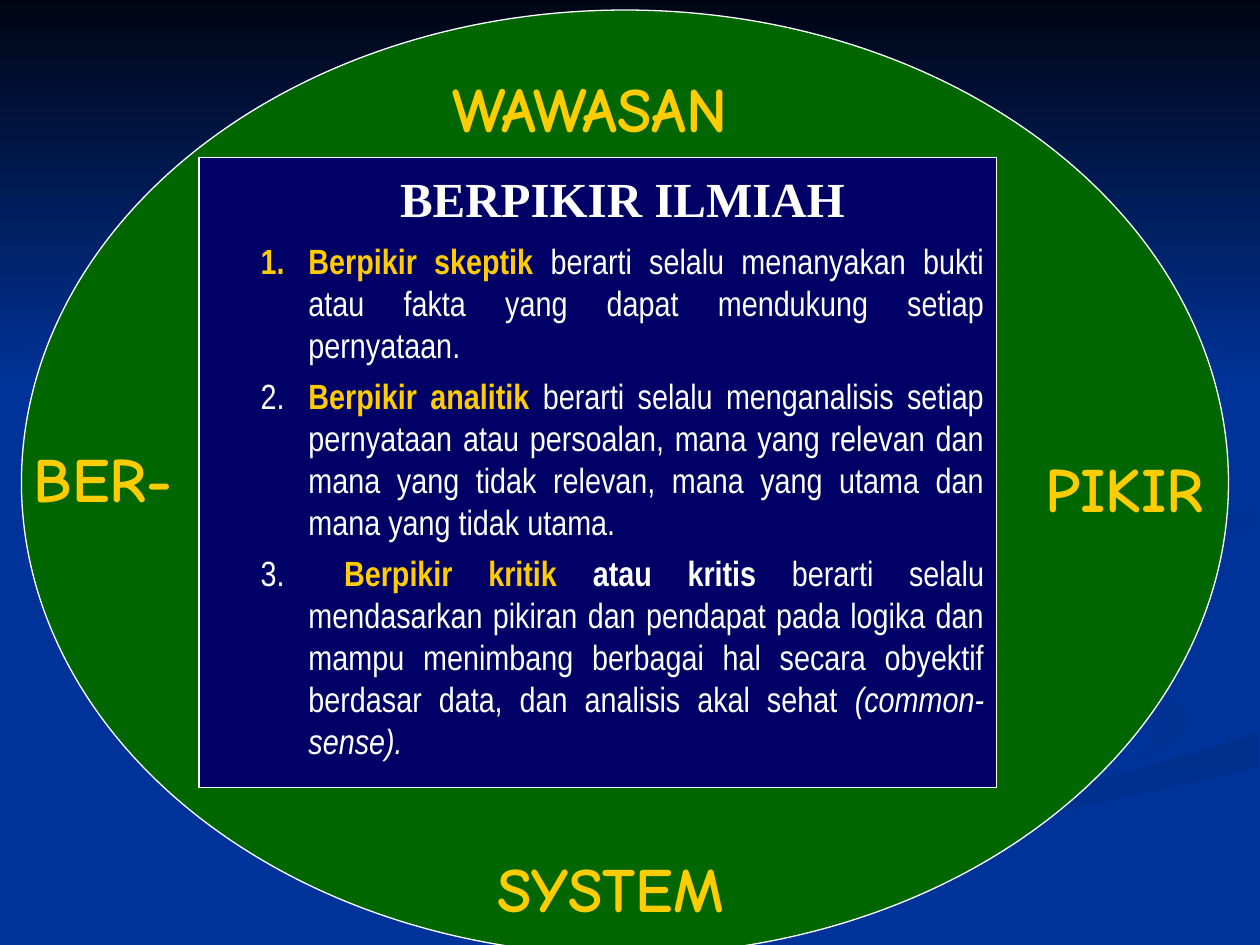
import pptx
import pptx.util
import pptx.dml.color
import pptx.enum.shapes
import pptx.enum.text
import pptx.oxml

Inches, Pt = pptx.util.Inches, pptx.util.Pt
Align = pptx.enum.text.PP_ALIGN
Shape = pptx.enum.shapes.MSO_SHAPE
HEX = {"blue": "003399", "night": "000514", "swirl": "003193", "band": "002F8C",
       "curl": "003091", "green": "006600", "navy": "000066",
       "gold": "FFCC00", "white": "FFFFFF"}
RGB = {name: pptx.dml.color.RGBColor.from_string(code) for name, code in HEX.items()}


def paint(shape, fills, angle=0, line=None):
    """Fill with one colour, or with a gradient between two."""
    shape.shadow.inherit = False
    if len(fills) == 1:
        shape.fill.solid()
        shape.fill.fore_color.rgb = RGB[fills[0]]
    else:
        shape.fill.gradient()
        shape.fill.gradient_angle = angle
        for stop, name in zip(shape.fill.gradient_stops, fills):
            stop.color.rgb = RGB[name]
    if line:
        shape.line.color.rgb = RGB[line]
        shape.line.width = Pt(0.75)
    else:
        shape.line.fill.background()


def write(para, text, color, **look):
    run = para.add_run()
    run.text = text
    run.font.color.rgb = RGB[color]
    for name, value in look.items():
        setattr(run.font, name, value)


deck = pptx.Presentation()
deck.slide_width, deck.slide_height = Inches(10), Inches(7.5)
slide = deck.slides.add_slide(deck.slide_layouts[6])
shapes = slide.shapes
slide.background.fill.solid()
slide.background.fill.fore_color.rgb = RGB["blue"]

# Background swirls, points in hundredths of an inch
swirls = [
    (("blue", "swirl"), 315,
     [(943, 570), (939, 562), (930, 553), (905, 540), (870, 530), (811, 515),
      (758, 498), (733, 483), (724, 464), (727, 479), (739, 494), (766, 512),
      (815, 530), (868, 544), (900, 557), (915, 571), (918, 581), (911, 593),
      (894, 605), (916, 597), (932, 589), (941, 581)]),
    (("band", "blue"), 270,
     [(519, 747), (503, 749), (571, 749), (614, 726), (670, 702), (752, 672),
      (861, 640), (998, 609), (998, 581), (963, 594), (903, 610), (797, 638),
      (696, 669), (630, 693), (569, 719)]),
    (("curl", "blue"), 315,
     [(781, 460), (786, 474), (806, 487), (826, 496), (809, 484), (805, 472),
      (816, 459), (843, 448), (896, 435), (971, 423), (998, 420), (998, 402),
      (967, 409), (898, 418), (835, 430), (799, 442)]),
]
for fills, angle, points in swirls:
    pen = shapes.build_freeform(*points[0], scale=Inches(0.01))
    pen.add_line_segments(points[1:], close=True)
    paint(pen.convert_to_shape(), fills, angle)

# Dark sky and green oval
sky = shapes.add_shape(Shape.RECTANGLE, 0, 0, Inches(10), Inches(3.08))
paint(sky, ("night", "blue"), 270)
oval = shapes.add_shape(Shape.OVAL, Inches(0.17), Inches(0.08), Inches(9.58), Inches(7.5))
paint(oval, ("green",), line="white")

# Words around the panel
label = {"size": Pt(36), "name": "Comic Neue", "bold": True}
for word, left, top, width in [("WAWASAN", 3.49, 0.5, 3.09), ("BER-", 0.17, 3.44, 1.45),
                               ("PIKIR", 8.2, 3.52, 1.64), ("SYSTEM", 3.85, 6.69, 2.31)]:
    box = shapes.add_textbox(Inches(left), Inches(top), Inches(width), Inches(0.7))
    box.text_frame.word_wrap = True
    write(box.text_frame.paragraphs[0], word, "gold", **label)

# Centre panel
panel = shapes.add_shape(Shape.RECTANGLE, Inches(1.58), Inches(1.25), Inches(6.33), Inches(5))
paint(panel, ("navy",), line="white")
frame = panel.text_frame
for name, value in {"word_wrap": True, "margin_top": Inches(0.09),
                    "vertical_anchor": pptx.enum.text.MSO_ANCHOR.TOP}.items():
    setattr(frame, name, value)

head = {"size": Pt(28), "name": "Times New Roman", "bold": True}
body = {"size": Pt(20), "name": "Arial Narrow", "bold": False}
bold = {**body, "bold": True}
slant = {**body, "italic": True}
paras = [
    [("BERPIKIR ILMIAH", "white", head)],
    [("Berpikir skeptik ", "gold", bold),
     ("berarti selalu menanyakan bukti atau fakta yang dapat mendukung setiap "
      "pernyataan.", "white", body)],
    [("2.\t", "white", body), ("Berpikir analitik ", "gold", bold),
     ("berarti selalu menganalisis setiap pernyataan atau persoalan, mana yang "
      "relevan dan mana yang tidak relevan, mana yang utama dan mana yang tidak "
      "utama.", "white", body)],
    [("3.\t ", "white", body), ("Berpikir kritik ", "gold", bold),
     ("atau kritis ", "white", bold),
     ("berarti selalu mendasarkan pikiran dan pendapat pada logika dan mampu "
      "menimbang berbagai hal secara obyektif berdasar data, dan analisis akal "
      "sehat ", "white", body),
     ("(common-sense).", "white", slant)],
]
for row, runs in enumerate(paras):
    para = frame.add_paragraph() if row else frame.paragraphs[0]
    para.alignment = Align.JUSTIFY if row else Align.CENTER
    para.space_after = Pt(5 if row else 7)
    props = para._p.get_or_add_pPr()
    props.set("marL", str(Inches(0.77)))
    props.set("indent", str(Inches(-0.38)))
    if row == 1:  # automatic number
        props.append(pptx.oxml.parse_xml(
            '<a:buAutoNum xmlns:a="http://schemas.openxmlformats.org/drawingml/2006/main"'
            ' type="arabicPeriod"/>'))
    for text, color, look in runs:
        write(para, text, color, **look)

deck.save("out.pptx")
